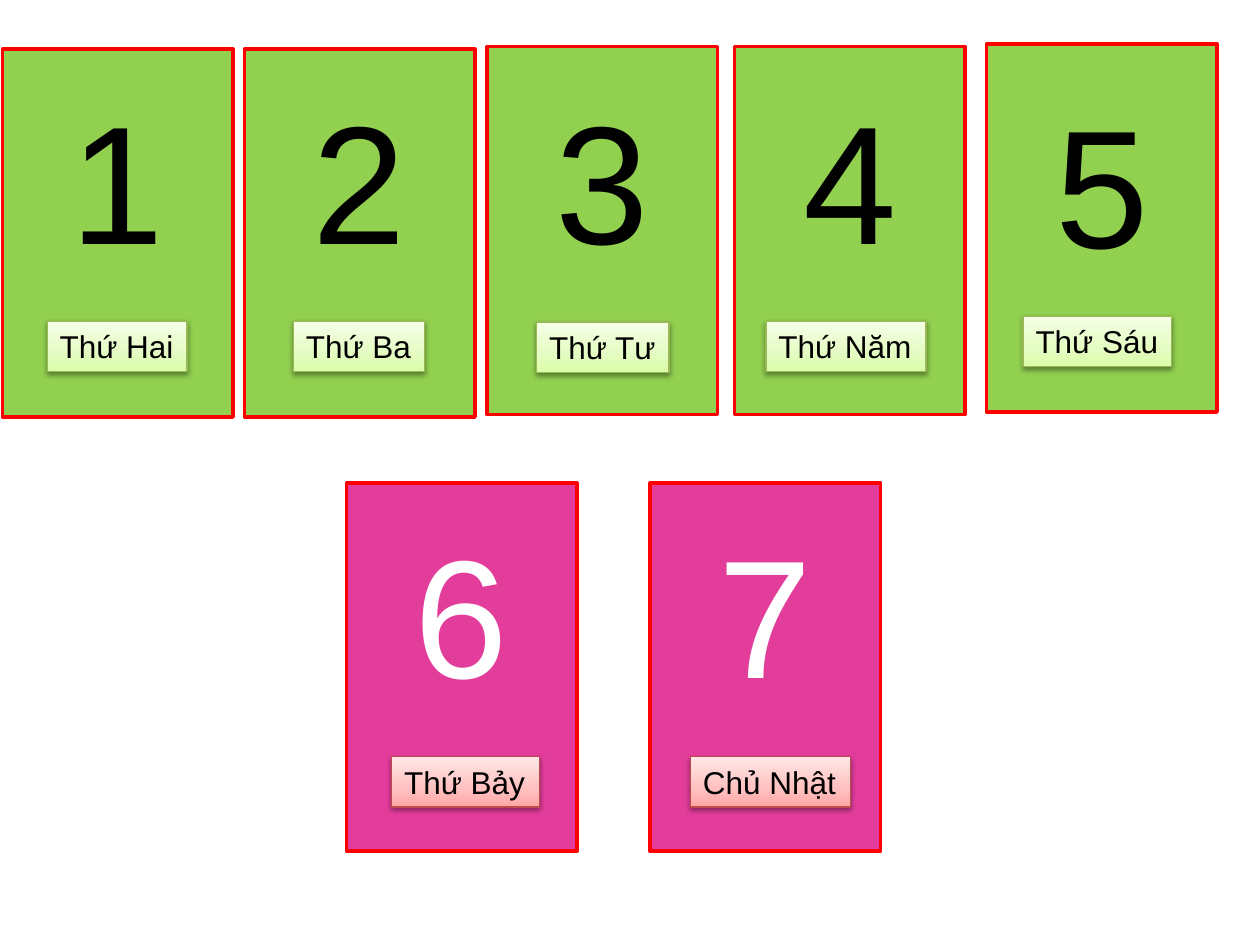
from copy import deepcopy

from lxml.etree import SubElement
from pptx import Presentation
from pptx.dml.color import RGBColor
from pptx.enum.shapes import MSO_SHAPE
from pptx.enum.text import MSO_ANCHOR, MSO_AUTO_SIZE, PP_ALIGN
from pptx.oxml.ns import qn
from pptx.util import Inches, Pt

COLUMNS, ROWS = 100, 75
CARD_WIDTH, CARD_HEIGHT = 18.3, 29.2
DIGIT_INSET, DIGIT_WIDTH, DIGIT_HEIGHT = 4.45, 9.5, 17.2
LABEL_HEIGHT = 4

WEEKDAY = {"card": "92D050", "digit": "000000", "border": "98B955",
           "stops": [(0, "DAFDA7"), (0.35, "E4FCC2"), (1, "F5FFE7")]}
WEEKEND = {"card": "E33D9C", "digit": "FFFFFF", "border": "BF4C48",
           "stops": [(0, "FFA6A5"), (0.35, "FFC0BF"), (1, "FFE7E7")]}

DAYS = [
    ("Thứ Hai", WEEKDAY, (0.2, 3.9), 5.6, (3.75, 25.5, 11.1)),
    ("Thứ Ba", WEEKDAY, (19.4, 3.9), 5.6, (23.3, 25.5, 10.4)),
    ("Thứ Tư", WEEKDAY, (38.65, 3.7), 5.6, (42.6, 25.55, 10.5)),
    ("Thứ Năm", WEEKDAY, (58.3, 3.7), 5.6, (60.8, 25.5, 12.7)),
    ("Thứ Sáu", WEEKDAY, (78.3, 3.5), 5.9, (81.2, 25.1, 11.8)),
    ("Thứ Bảy", WEEKEND, (27.5, 38.35), 40, (31.1, 60.05, 11.7)),
    ("Chủ Nhật", WEEKEND, (51.6, 38.35), 40, (54.8, 60.05, 12.7)),
]


def color(value):
    return RGBColor.from_string(value)


class DayCards:
    font = "Arial"
    outline = "FF0000"
    ink = "000000"

    def __init__(self, presentation):
        self.slide = presentation.slides.add_slide(presentation.slide_layouts[6])
        self.column = presentation.slide_width / COLUMNS
        self.row = presentation.slide_height / ROWS

    def place(self, left, top, width, height):
        return (round(left * self.column), round(top * self.row),
                round(width * self.column), round(height * self.row))

    def box(self, preset, area, border, weight):
        shape = self.slide.shapes.add_shape(preset, *self.place(*area))
        shape.shadow.inherit = False
        shape.line.color.rgb = color(border)
        shape.line.width = Pt(weight)
        return shape

    def add_text(self, shape, text, size, ink):
        frame = shape.text_frame
        frame.word_wrap = False
        frame.auto_size = MSO_AUTO_SIZE.SHAPE_TO_FIT_TEXT
        frame.vertical_anchor = MSO_ANCHOR.TOP
        paragraph = frame.paragraphs[0]
        paragraph.alignment = PP_ALIGN.LEFT
        run = paragraph.add_run()
        run.text = text
        run.font.name = self.font
        run.font.size = Pt(size)
        run.font.color.rgb = color(ink)

    def card(self, left, top, fill):
        area = (left, top, CARD_WIDTH, CARD_HEIGHT)
        shape = self.box(MSO_SHAPE.FLOWCHART_PROCESS, area, self.outline, 2)
        shape.fill.solid()
        shape.fill.fore_color.rgb = color(fill)

    def digit(self, left, top, text, ink):
        area = self.place(left, top, DIGIT_WIDTH, DIGIT_HEIGHT)
        self.add_text(self.slide.shapes.add_textbox(*area), text, 96, ink)

    def label(self, left, top, width, text, style):
        area = (left, top, width, LABEL_HEIGHT)
        shape = self.box(MSO_SHAPE.RECTANGLE, area, style["border"], 0.75)
        self.gradient(shape, style["stops"])
        self.cast_shadow(shape)
        self.add_text(shape, text, 18, self.ink)

    def gradient(self, shape, stops):
        shape.fill.gradient()
        shape.fill.gradient_angle = 90
        stop_list = next(shape.element.iter(qn("a:gsLst")))
        stop_list.append(deepcopy(stop_list[-1]))
        for stop, (position, value) in zip(shape.fill.gradient_stops, stops):
            stop.position = position
            stop.color.rgb = color(value)

    def cast_shadow(self, shape):
        effects = next(shape.element.iter(qn("a:effectLst")))
        shadow = SubElement(effects, qn("a:outerShdw"), blurRad=str(Pt(3.1)),
                            dist=str(Pt(1.6)), dir="5400000", rotWithShape="0")
        tint = SubElement(shadow, qn("a:srgbClr"), val="000000")
        SubElement(tint, qn("a:alpha"), val="38000")


def main():
    presentation = Presentation()
    presentation.slide_width = Inches(10)
    presentation.slide_height = Inches(7.5)
    cards = DayCards(presentation)
    for number, (name, style, corner, digit_top, label_area) in enumerate(DAYS, 1):
        cards.card(*corner, style["card"])
        cards.digit(corner[0] + DIGIT_INSET, digit_top, str(number), style["digit"])
        cards.label(*label_area, name, style)
    presentation.save("out.pptx")


if __name__ == "__main__":
    main()
